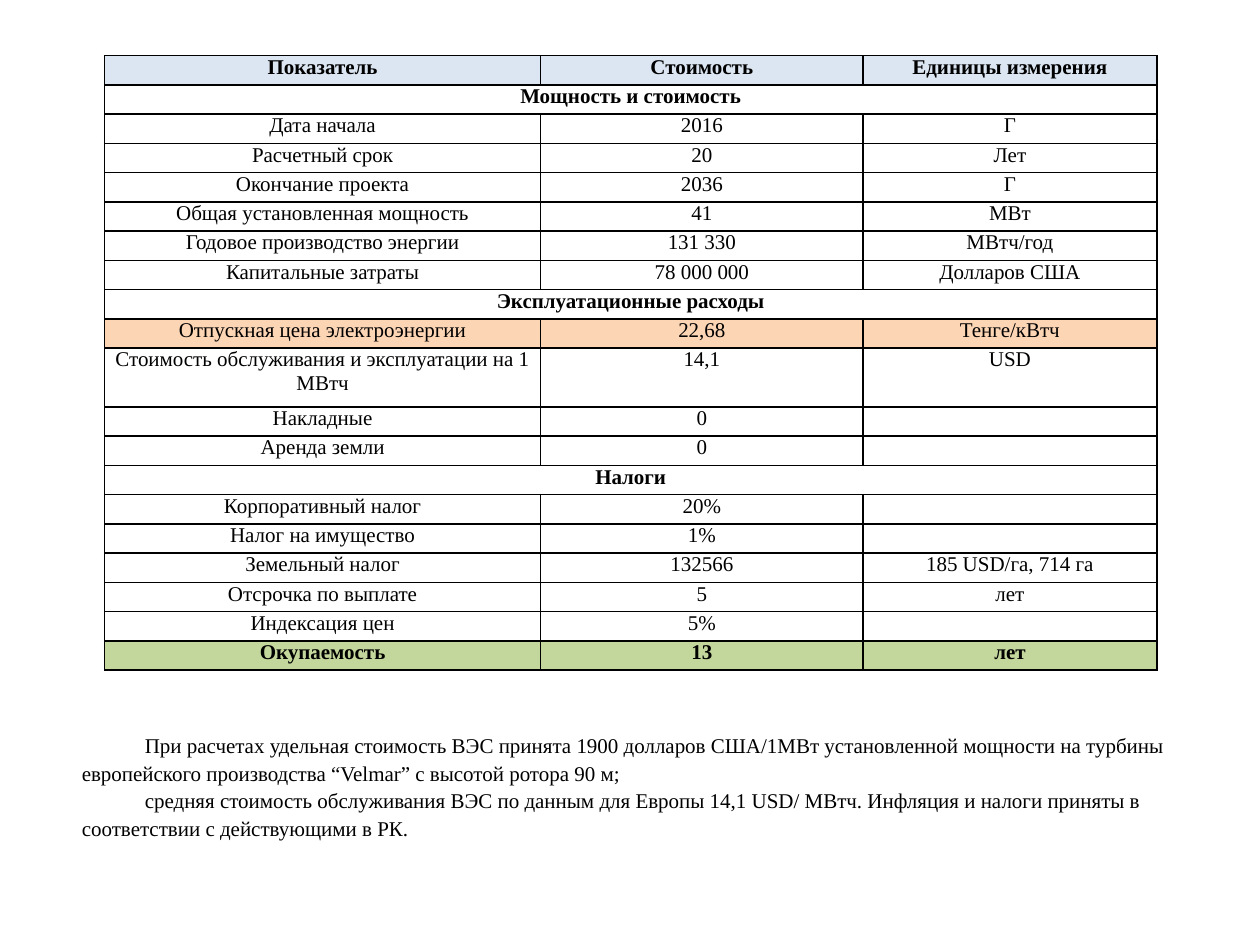
from dataclasses import dataclass
from typing import Optional

from lxml.etree import SubElement
from pptx import Presentation
from pptx.dml.color import RGBColor
from pptx.enum.text import MSO_ANCHOR, MSO_AUTO_SIZE, PP_ALIGN
from pptx.oxml.ns import qn
from pptx.util import Cm, Pt

BLACK = RGBColor(0x00, 0x00, 0x00)
HEADER_BLUE = RGBColor(0xDC, 0xE6, 0xF2)
PRICE_ORANGE = RGBColor(0xFC, 0xD5, 0xB5)
PAYBACK_GREEN = RGBColor(0xC3, 0xD6, 0x9B)

FONT_FORMAT = {"name": "Times New Roman", "size": Pt(12)}
CELL_FORMAT = {
    "margin_left": Cm(0.18),
    "margin_right": Cm(0.18),
    "margin_top": 0,
    "margin_bottom": 0,
    "vertical_anchor": MSO_ANCHOR.TOP,
}
COLUMN_WIDTHS = (Cm(8.79), Cm(6.5), Cm(5.92))
ROW_HEIGHT = Cm(0.59)


@dataclass
class TableRow:
    """A row of the table; a row with a single text spans all columns."""
    texts: tuple
    bold: bool = False
    fill: Optional[RGBColor] = None
    lines: int = 1


ROWS = [
    TableRow(("Показатель", "Стоимость", "Единицы измерения"), True, HEADER_BLUE),
    TableRow(("Мощность и стоимость",), True),
    TableRow(("Дата начала", "2016", "Г")),
    TableRow(("Расчетный срок", "20", "Лет")),
    TableRow(("Окончание проекта", "2036", "Г")),
    TableRow(("Общая установленная мощность", "41", "МВт")),
    TableRow(("Годовое производство энергии", "131 330", "МВтч/год")),
    TableRow(("Капитальные затраты", "78 000 000", "Долларов США")),
    TableRow(("Эксплуатационные расходы",), True),
    TableRow(("Отпускная цена электроэнергии", "22,68", "Тенге/кВтч"), fill=PRICE_ORANGE),
    TableRow(("Стоимость обслуживания и эксплуатации на 1 МВтч", "14,1", "USD"), lines=2),
    TableRow(("Накладные", "0", "")),
    TableRow(("Аренда земли", "0", "")),
    TableRow(("Налоги",), True),
    TableRow(("Корпоративный налог", "20%", "")),
    TableRow(("Налог на имущество", "1%", "")),
    TableRow(("Земельный налог", "132566", "185 USD/га, 714 га")),
    TableRow(("Отсрочка по выплате", "5", "лет")),
    TableRow(("Индексация цен", "5%", "")),
    TableRow(("Окупаемость", "13", "лет"), True, PAYBACK_GREEN),
]

NOTES = [
    "При расчетах удельная стоимость ВЭС принята 1900 долларов США/1МВт "
    "установленной мощности на турбины европейского производства “Velmar” "
    "с высотой ротора 90 м;",
    "средняя стоимость обслуживания ВЭС по данным для Европы 14,1 USD/ МВтч. "
    "Инфляция и налоги приняты в соответствии с действующими в РК.",
]


def apply_format(target, values: dict) -> None:
    for name, value in values.items():
        setattr(target, name, value)


def write_text(paragraph, text: str, bold: bool = False) -> None:
    run = paragraph.add_run()
    run.text = text
    apply_format(run.font, {**FONT_FORMAT, "bold": bold})
    run.font.color.rgb = BLACK


def draw_borders(cell) -> None:
    properties = cell._tc.get_or_add_tcPr()
    for side in ("a:lnL", "a:lnR", "a:lnT", "a:lnB"):
        line = SubElement(properties, qn(side), w=str(Pt(1)))
        fill = SubElement(line, qn("a:solidFill"))
        SubElement(fill, qn("a:srgbClr"), val=str(BLACK))


def fill_cell(cell, text: str, row: TableRow) -> None:
    apply_format(cell, CELL_FORMAT)
    draw_borders(cell)
    if row.fill is None:
        cell.fill.background()
    else:
        cell.fill.solid()
        cell.fill.fore_color.rgb = row.fill
    paragraph = cell.text_frame.paragraphs[0]
    paragraph.alignment = PP_ALIGN.CENTER
    if text:
        write_text(paragraph, text, row.bold)
    else:
        # An empty cell keeps the row low only with a small text size
        SubElement(paragraph._p, qn("a:endParaRPr"), sz="1200")


def draw_table(slide, rows: list) -> None:
    height = ROW_HEIGHT * sum(row.lines for row in rows)
    table = slide.shapes.add_table(
        len(rows), len(COLUMN_WIDTHS), Cm(2.11), Cm(1.12), sum(COLUMN_WIDTHS), height
    ).table
    apply_format(table, {"first_row": False, "horz_banding": False})
    for column, width in zip(table.columns, COLUMN_WIDTHS):
        column.width = width
    last = len(COLUMN_WIDTHS) - 1
    for index, row in enumerate(rows):
        table.rows[index].height = ROW_HEIGHT * row.lines
        for position in range(len(COLUMN_WIDTHS)):
            text = row.texts[position] if position < len(row.texts) else ""
            fill_cell(table.cell(index, position), text, row)
        if len(row.texts) == 1:
            table.cell(index, 0).merge(table.cell(index, last))


def draw_notes(slide, notes: list) -> None:
    box = slide.shapes.add_textbox(Cm(1.4), Cm(14.68), Cm(22.6), Cm(2.31))
    frame = box.text_frame
    apply_format(frame, {
        "word_wrap": True,
        "auto_size": MSO_AUTO_SIZE.SHAPE_TO_FIT_TEXT,
        "vertical_anchor": MSO_ANCHOR.MIDDLE,
    })
    for index, note in enumerate(notes):
        paragraph = frame.add_paragraph() if index else frame.paragraphs[0]
        paragraph.line_spacing = 1.09
        properties = paragraph._p.get_or_add_pPr()
        properties.set("marL", "0")
        properties.set("indent", str(Cm(1.27)))
        write_text(paragraph, note)


def main() -> None:
    presentation = Presentation()
    apply_format(presentation, {"slide_width": Cm(25.4), "slide_height": Cm(19.05)})
    slide = presentation.slides.add_slide(presentation.slide_layouts[6])
    # Project indicators
    draw_table(slide, ROWS)
    # Assumptions under the table
    draw_notes(slide, NOTES)
    presentation.save("out.pptx")


if __name__ == "__main__":
    main()
